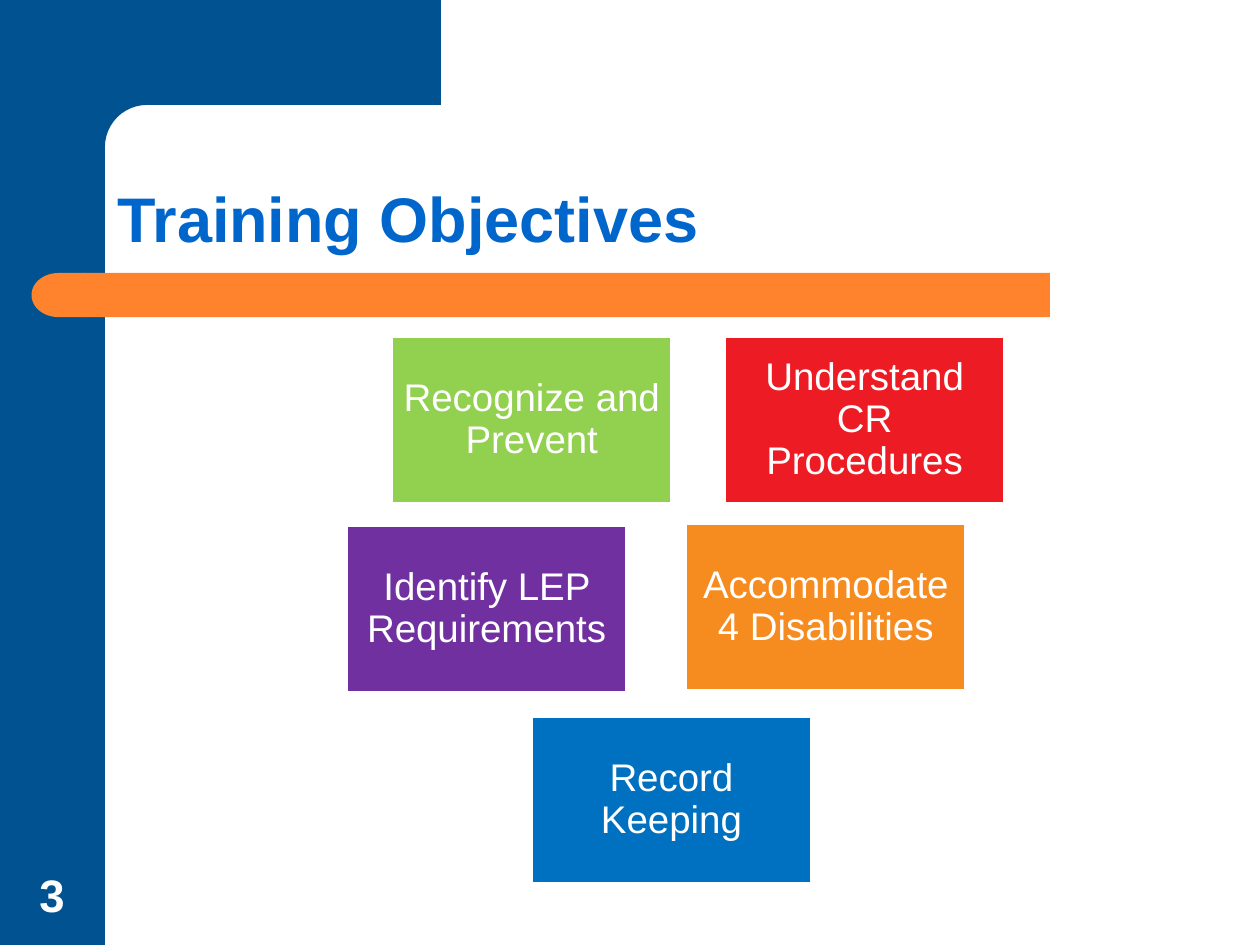
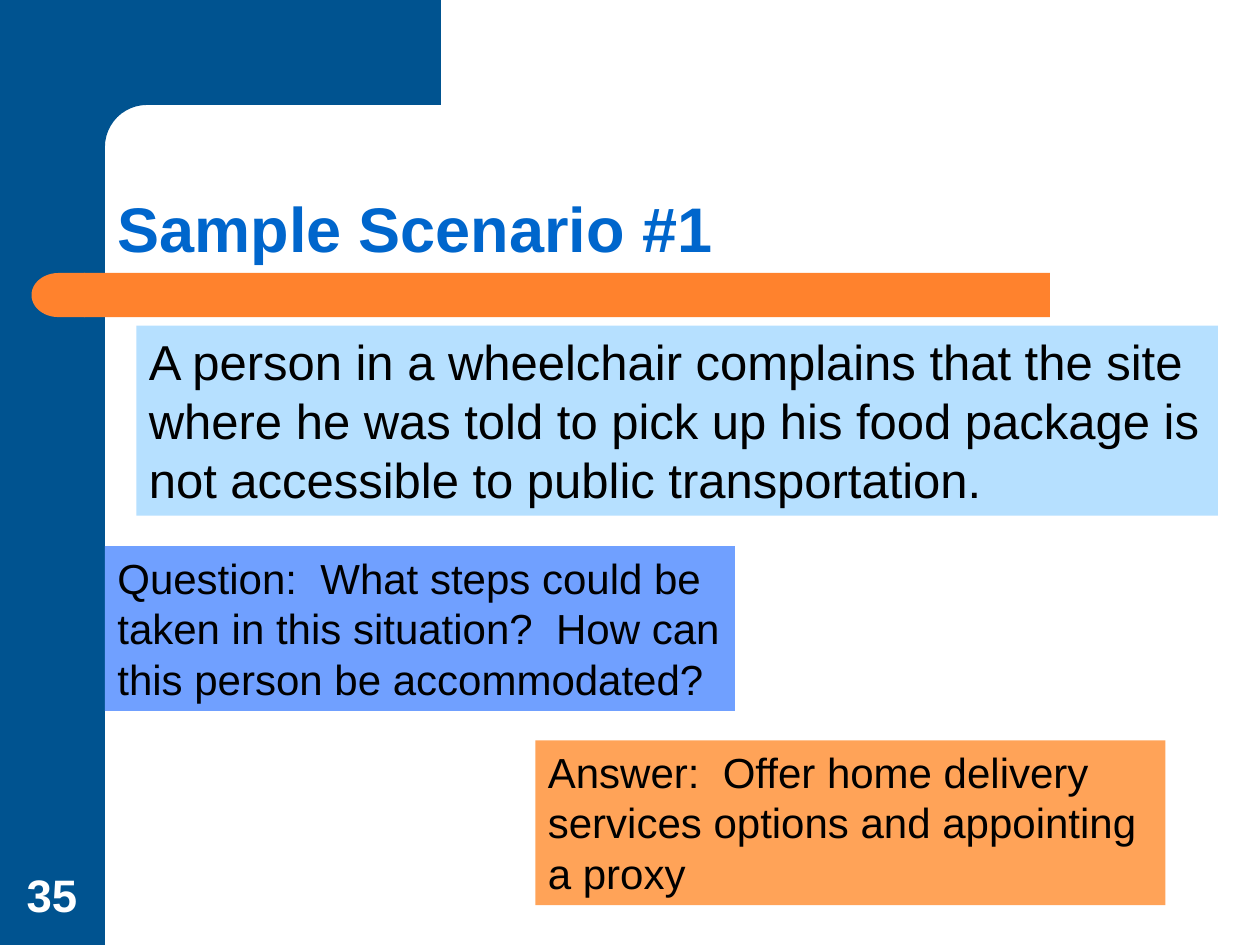
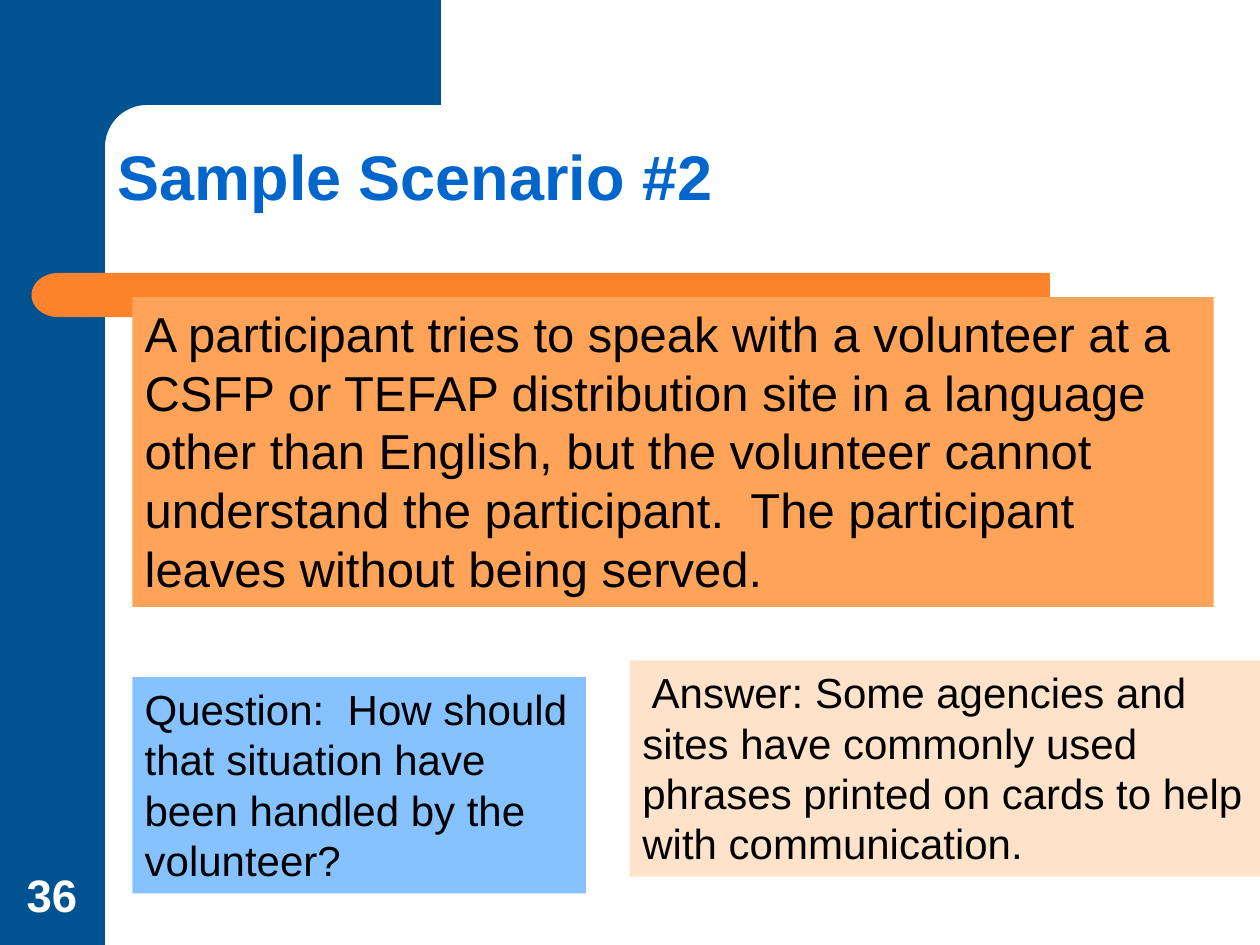
from dataclasses import dataclass
from math import cos, pi, sin

from pptx import Presentation
from pptx.dml.color import RGBColor
from pptx.enum.shapes import MSO_SHAPE as Shape
from pptx.enum.text import MSO_ANCHOR as Anchor, MSO_AUTO_SIZE as AutoSize, PP_ALIGN as Align
from pptx.util import Inches, Pt


@dataclass(frozen=True)
class Theme:
    font: str = "Arial"
    navy: str = "005390"
    orange: str = "FF822D"
    title: str = "0066CC"
    white: str = "FFFFFF"
    black: str = "000000"
    title_size: int = 36
    number_size: int = 26
    scenario_size: int = 28
    reply_size: int = 24
    objective_size: int = 22


theme = Theme()
presentation = Presentation()
presentation.slide_width, presentation.slide_height = Inches(10), Inches(7.5)
COLUMN = presentation.slide_width / 12  # square grid: 12 columns by 9 rows


def grid(*cells):
    """Turn grid columns or rows into slide lengths."""
    return [round(cell * COLUMN) for cell in cells]


def write(shape, text, size, color, bold=False, align=Align.LEFT, anchor=Anchor.TOP, spacing=1.0):
    frame = shape.text_frame
    frame.text = text
    frame.word_wrap = True
    frame.auto_size = AutoSize.NONE
    frame.vertical_anchor = anchor
    paragraph = frame.paragraphs[0]
    paragraph.alignment = align
    paragraph.line_spacing = spacing
    font = paragraph.runs[0].font
    font.name, font.size, font.bold = theme.font, Pt(size), bold
    font.color.rgb = RGBColor.from_string(color)


# Slides: number, title, title top and height in rows
layout = presentation.slide_layouts[5]
slides = []
for number, title, top, height in [
    ("3", "Training Objectives", 1, 1.5),
    ("35", "Sample Scenario #1", 1.1, 1.5),
    ("36", "Sample Scenario #2", 1.1, 1),
]:
    slide = presentation.slides.add_slide(layout)
    heading = slide.shapes.title
    heading.left, heading.top, heading.width, heading.height = grid(1, top, 10.4, height)
    write(heading, title, theme.title_size, theme.title, bold=True, anchor=Anchor.BOTTOM, spacing=0.9)
    number_box = slide.shapes.add_textbox(*grid(0.11, 8.2, 0.77, 0.64))
    write(number_box, number, theme.number_size, theme.white, bold=True,
          align=Align.CENTER, anchor=Anchor.BOTTOM)
    slides.append(slide)
objectives_slide, wheelchair_slide, language_slide = slides

# Shared frame: drawn once, then moved to the layout
shapes = objectives_slide.shapes
sidebar = shapes.add_shape(Shape.RECTANGLE, *grid(0, 0, 1, 9))
radius = 0.4
angles = [step * pi / 24 for step in range(13)]
corner = [(1 + radius * (1 - sin(angle)), 1 + radius * (1 - cos(angle))) for angle in angles]
outline = [(4.2, 0), (4.2, 1), *corner, (1, 1.54), (0.6, 1.54)]
builder = shapes.build_freeform(*grid(0.6, 0))
builder.add_line_segments([grid(*point) for point in outline], close=True)
tab = builder.convert_to_shape()
band = shapes.add_shape(Shape.RECTANGLE, *grid(0.8, 2.6, 9.2, 0.42))
band_end = shapes.add_shape(Shape.FLOWCHART_DELAY, *grid(0.3, 2.6, 0.51, 0.42))
band_end.rotation = 180
frame_parts = [(sidebar, theme.navy), (tab, theme.navy), (band, theme.orange), (band_end, theme.orange)]
for position, (part, color) in enumerate(frame_parts, start=2):
    part.shadow.inherit = False
    part.fill.solid()
    part.fill.fore_color.rgb = RGBColor.from_string(color)
    part.line.fill.background()
    layout.shapes.element.insert(position, part.element)

# Objectives: text, fill, left column, top row
for text, fill, left, top in [
    ("Recognize and Prevent", "92D050", 3.73, 3.2),
    ("Understand CR Procedures", "ED1C24", 6.9, 3.2),
    ("Identify LEP Requirements", "7030A0", 3.3, 5),
    ("Accommodate 4 Disabilities", "F68B1F", 6.53, 4.98),
    ("Record Keeping", "0070C0", 5.06, 6.82),
]:
    tile = objectives_slide.shapes.add_shape(Shape.RECTANGLE, *grid(left, top, 2.67, 1.6))
    tile.shadow.inherit = False
    tile.fill.solid()
    tile.fill.fore_color.rgb = RGBColor.from_string(fill)
    tile.line.color.rgb = RGBColor.from_string(theme.white)
    tile.line.width = Pt(2)
    write(tile, text, theme.objective_size, theme.white,
          align=Align.CENTER, anchor=Anchor.MIDDLE, spacing=0.9)
    frame = tile.text_frame
    frame.margin_left = frame.margin_right = frame.margin_top = frame.margin_bottom = Inches(0.09)

# Scenarios: slide, text, size, fill, left, top, width and height on the grid
for slide, text, size, fill, *place in [
    (wheelchair_slide,
     "A person in a wheelchair complains that the site where he was told to pick up "
     "his food package is not accessible to public transportation.",
     theme.scenario_size, "B6E0FF", 1.3, 3.1, 10.3, 1.81),
    (wheelchair_slide,
     "Question:  What steps could be taken in this situation?  "
     "How can this person be accommodated?",
     theme.reply_size, "70A0FF", 1, 5.2, 6, 1.57),
    (wheelchair_slide,
     "Answer:  Offer home delivery services options and appointing a proxy",
     theme.reply_size, "FFA358", 5.1, 7.05, 6, 1.57),
    (language_slide,
     "A participant tries to speak with a volunteer at a CSFP or TEFAP distribution site "
     "in a language other than English, but the volunteer cannot understand the "
     "participant.  The participant leaves without being served.",
     theme.scenario_size, "FFA358", 1.26, 2.83, 10.3, 2.95),
    (language_slide,
     "Question:  How should that situation have been handled by the volunteer?",
     theme.reply_size, "85C2FF", 1.26, 6.45, 4.32, 2.06),
    (language_slide,
     " Answer: Some agencies and sites have commonly used phrases printed on cards "
     "to help with communication.",
     theme.reply_size, "FFE2CA", 6, 6.29, 6, 2.06),
]:
    box = slide.shapes.add_shape(Shape.RECTANGLE, *grid(*place))
    box.shadow.inherit = False
    box.fill.solid()
    box.fill.fore_color.rgb = RGBColor.from_string(fill)
    box.line.fill.background()
    write(box, text, size, theme.black)
    box.text_frame.auto_size = AutoSize.SHAPE_TO_FIT_TEXT

presentation.save("out.pptx")
